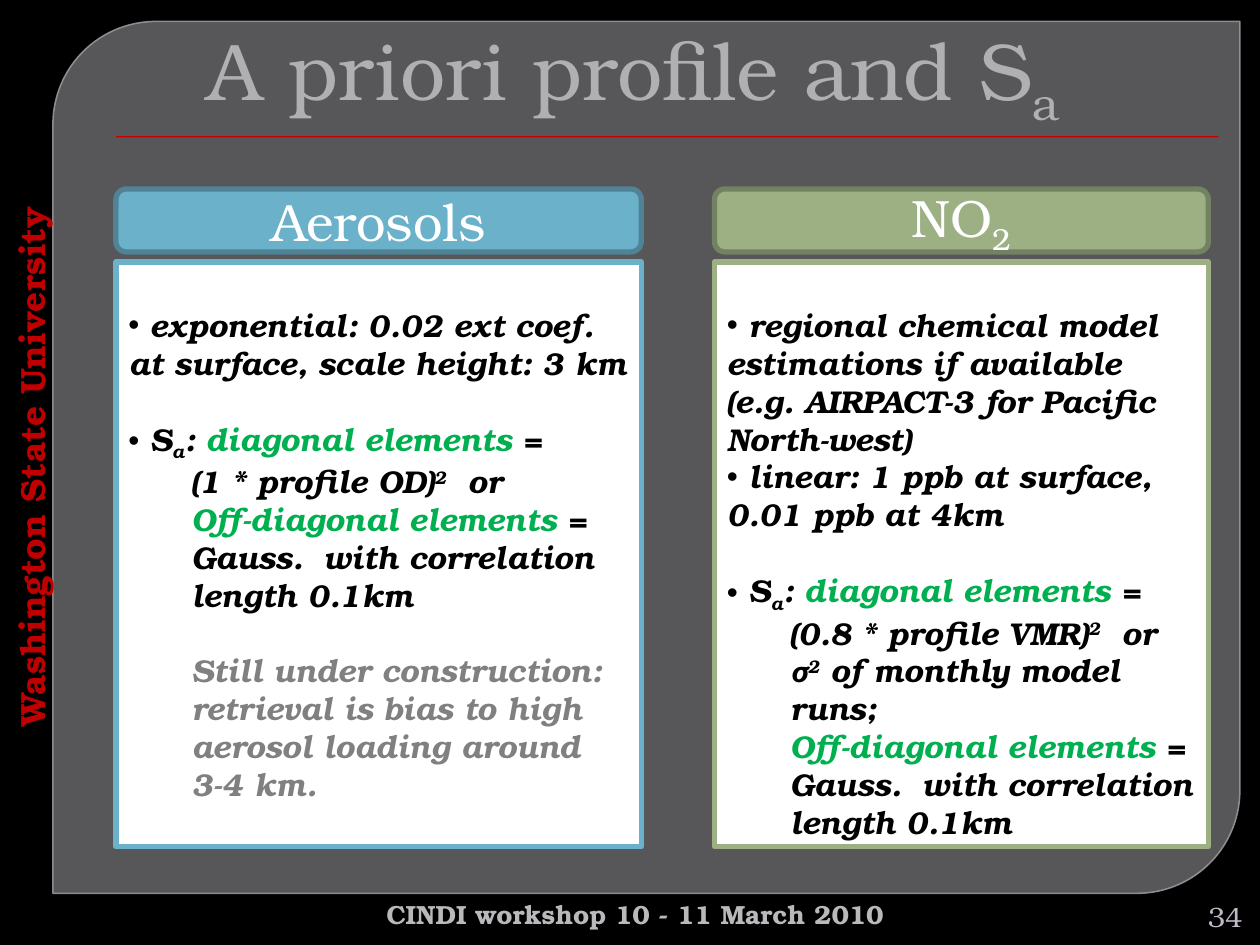
from lxml import etree
from pptx import Presentation
from pptx.dml.color import RGBColor
from pptx.enum.shapes import MSO_SHAPE
from pptx.enum.text import MSO_ANCHOR, MSO_AUTO_SIZE, PP_ALIGN
from pptx.oxml.ns import qn
from pptx.util import Inches, Pt

RECT, ROUNDED = MSO_SHAPE.RECTANGLE, MSO_SHAPE.ROUNDED_RECTANGLE
PANEL = MSO_SHAPE.ROUND_2_DIAG_RECTANGLE
TOP, MIDDLE, BOTTOM = MSO_ANCHOR.TOP, MSO_ANCHOR.MIDDLE, MSO_ANCHOR.BOTTOM
LEFT, CENTER, RIGHT = PP_ALIGN.LEFT, PP_ALIGN.CENTER, PP_ALIGN.RIGHT
NO_AUTOFIT = MSO_AUTO_SIZE.NONE

FONT = "TeX Gyre Bonum"
GREEN, GREY, BLACK, WHITE = "00B050", "808080", "000000", "FFFFFF"
SUB, SUPER = -25, 30
LINE_GAP = 21.6  # one line of 18 pt text
BODY = {"size": Pt(18), "bold": True, "italic": True}

# A paragraph is (kind, space before, runs); a run is (text, colour, baseline)
PRIOR_COVARIANCE = ("bullet", LINE_GAP, [
    (" S", BLACK, 0), ("a", BLACK, SUB), (": ", BLACK, 0),
    ("diagonal elements ", GREEN, 0), ("=", BLACK, 0)])
OFF_DIAGONAL = [
    ("indent", 0, [("Off-diagonal elements ", GREEN, 0), ("=", BLACK, 0)]),
    ("indent", 0, [("Gauss.  with correlation length 0.1km", BLACK, 0)]),
]
AEROSOL_TEXT = [
    ("bullet", 0, [(" exponential: 0.02 ext coef. at surface, "
                    "scale height: 3 km", BLACK, 0)]),
    PRIOR_COVARIANCE,
    ("indent", 0, [("(1 * profile OD)", BLACK, 0), ("2", BLACK, SUPER),
                   ("  or", BLACK, 0)]),
    *OFF_DIAGONAL,
    ("indent", LINE_GAP, [("Still under construction: retrieval is bias to "
                           "high aerosol loading around", GREY, 0)]),
    ("indent", 0, [("3-4 km.", GREY, 0)]),
]
NO2_TEXT = [
    ("bullet", 0, [(" regional chemical model estimations if available "
                    "(e.g. AIRPACT-3 for Pacific North-west)", BLACK, 0)]),
    ("bullet", 0, [(" linear: 1 ppb at surface, 0.01 ppb at 4km", BLACK, 0)]),
    PRIOR_COVARIANCE,
    ("indent", 0, [("(0.8 * profile VMR)", BLACK, 0), ("2", BLACK, SUPER),
                   ("  or", BLACK, 0)]),
    ("indent", 0, [("σ", BLACK, 0), ("2", BLACK, SUPER),
                   (" of monthly model runs;", BLACK, 0)]),
    *OFF_DIAGONAL,
]

# Heading runs, text, left, width, colour, heading border
COLUMNS = [
    ([("Aerosols", WHITE, 0)], AEROSOL_TEXT, 0.92, 4.17, "6BB1C9", "4F8395"),
    ([("NO", WHITE, 0), ("2", WHITE, SUB)], NO2_TEXT,
     5.67, 3.92, "9CB084", "738262"),
]


def rgb(value):
    return RGBColor.from_string(value)


def set_alpha(color_format_parent, percent):
    """Make every solid colour below an XML element partly transparent."""
    for color in color_format_parent.iter(qn("a:srgbClr")):
        etree.SubElement(color, qn("a:alpha"), val=str(percent * 1000))


def add_runs(paragraph, runs, style):
    for text, color, baseline in runs:
        run = paragraph.add_run()
        run.text = text
        for name, value in {"name": FONT, **style}.items():
            setattr(run.font, name, value)
        run.font.color.rgb = rgb(color)
        if baseline:
            run._r.get_or_add_rPr().set("baseline", str(baseline * 1000))


def format_frame(frame, anchor, wrap=True):
    settings = {"word_wrap": wrap, "auto_size": NO_AUTOFIT,
                "vertical_anchor": anchor}
    for name, value in settings.items():
        setattr(frame, name, value)


def set_line_of_text(shape, runs, style, align, anchor, wrap=True):
    format_frame(shape.text_frame, anchor, wrap)
    paragraph = shape.text_frame.paragraphs[0]
    paragraph.alignment = align
    add_runs(paragraph, runs, style)
    return paragraph


def add_box(slide, kind, bounds, fill, border=None, border_width=3):
    box = slide.shapes.add_shape(kind, *map(Inches, bounds))
    box.shadow.inherit = False
    box.fill.solid()
    box.fill.fore_color.rgb = rgb(fill)
    if border:
        box.line.color.rgb = rgb(border)
        box.line.width = Pt(border_width)
    else:
        box.line.fill.background()
    return box


def add_label(slide, bounds, text, color, style, align, anchor, wrap=True):
    label = slide.shapes.add_textbox(*map(Inches, bounds))
    set_line_of_text(label, [(text, color, 0)], style, align, anchor, wrap)
    return label


def add_body(card, paragraphs):
    frame = card.text_frame
    format_frame(frame, TOP)
    frame.margin_top = Inches(0.35)
    for index, (kind, space, runs) in enumerate(paragraphs):
        paragraph = frame.paragraphs[0] if index == 0 else frame.add_paragraph()
        paragraph.alignment = LEFT
        paragraph.space_before = Pt(space)
        properties = paragraph._p.get_or_add_pPr()
        if kind == "bullet":
            etree.SubElement(properties, qn("a:buFont"), typeface="Arial")
            etree.SubElement(properties, qn("a:buChar"), char="•")
        else:
            paragraph.level = 1
            properties.set("marL", str(Inches(0.5)))
            properties.set("indent", "0")
        add_runs(paragraph, runs, BODY)


def add_column(slide, heading, paragraphs, left, width, color, border):
    card = add_box(slide, RECT, (left, 2.08, width, 4.64), WHITE, color)
    add_body(card, paragraphs)
    header = add_box(slide, ROUNDED, (left, 1.5, width, 0.5), color, border)
    set_line_of_text(header, heading, {"size": Pt(30)}, CENTER, MIDDLE)


def add_backdrop(slide):
    slide.background.fill.solid()
    slide.background.fill.fore_color.rgb = rgb(BLACK)
    panel = add_box(slide, PANEL, (0.42, 0.17, 9.42, 6.92),
                    "87868B", "9B9A9F", 0.87)
    panel.adjustments[0], panel.adjustments[1] = 0.118, 0
    set_alpha(panel._element.spPr.find(qn("a:solidFill")), 65)
    set_alpha(panel.line._ln, 88)
    university = add_label(slide, (-1.72, 3.45, 3.94, 0.5),
                           "Washington State University", "C00000",
                           {"size": Pt(20), "bold": True},
                           CENTER, MIDDLE, wrap=False)
    university.rotation = 270
    # Rule below the title
    add_box(slide, RECT, (0.92, 1.08, 8.75, 0.01), "C40000")


def add_title(slide):
    title = slide.shapes.title
    bounds = {"left": 0.5, "top": 0.19, "width": 9, "height": 0.89}
    for name, value in bounds.items():
        setattr(title, name, Inches(value))
    paragraph = set_line_of_text(
        title, [("A priori profile and S", WHITE, 0), ("a", WHITE, SUB)],
        {"size": Pt(46)}, CENTER, BOTTOM)
    paragraph._p.get_or_add_pPr().set("marL", str(Inches(0.06)))


def main():
    deck = Presentation()
    deck.slide_width, deck.slide_height = Inches(10), Inches(7.5)
    slide = deck.slides.add_slide(deck.slide_layouts[5])
    add_backdrop(slide)
    add_title(slide)
    for column in COLUMNS:
        add_column(slide, *column)
    # Footer and slide number
    add_label(slide, (1.58, 7.08, 6.92, 0.3), "CINDI workshop 10 - 11 March 2010",
              "B9B8BB", {"size": Pt(15), "bold": True}, CENTER, TOP)
    add_label(slide, (9.45, 7.12, 0.51, 0.3), "34", "C0B9C8",
              {"size": Pt(16)}, RIGHT, MIDDLE)
    deck.save("out.pptx")


if __name__ == "__main__":
    main()
